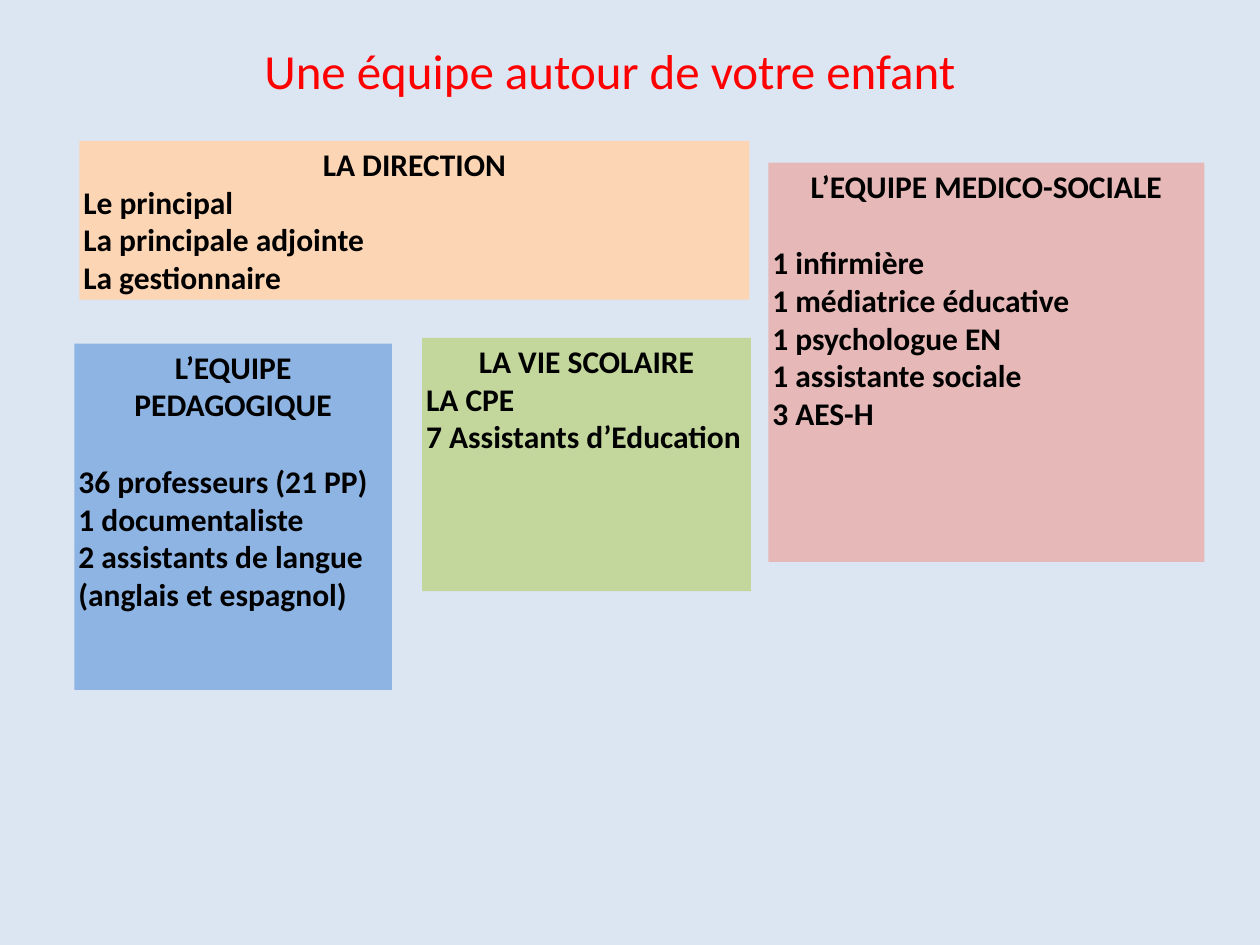
import pptx
import pptx.dml.color
import pptx.enum.shapes
import pptx.enum.text
import pptx.util

Cm, Pt = pptx.util.Cm, pptx.util.Pt
ALIGN = pptx.enum.text.PP_ALIGN
ANCHOR = pptx.enum.text.MSO_ANCHOR

COLORS = {
    "background": "DCE6F2",
    "title": "FF0000",
    "text": "000000",
    "direction": "FCD5B5",
    "teaching": "8EB4E3",
    "school_life": "C3D69B",
    "medical": "E6B9B8",
}


def rgb(name):
    return pptx.dml.color.RGBColor.from_string(COLORS[name])


def write(p, text, font="Calibri", size=18, color="text", bold=False,
          align=ALIGN.LEFT, after=0):
    p.alignment = align
    p.space_after = Pt(after)
    r = p.add_run()
    r.text = text
    r.font.name = font
    r.font.size = Pt(size)
    r.font.bold = bold
    r.font.color.rgb = rgb(color)


class TeamSlide:
    inset = Cm(0.08)
    heading_gap = 22  # one line of 18 pt text

    def __init__(self, prs):
        self.s = prs.slides.add_slide(prs.slide_layouts[6])
        fill = self.s.background.fill
        fill.solid()
        fill.fore_color.rgb = rgb("background")

    def title(self, text, box):
        sp = self.s.shapes.add_textbox(*map(Cm, box))
        tf = sp.text_frame
        tf.word_wrap = True
        tf.vertical_anchor = ANCHOR.MIDDLE
        write(tf.paragraphs[0], text, size=28, color="title", align=ALIGN.CENTER)

    def team(self, color, box, heading, members, gap=False):
        """Draw a filled box; gap leaves one line below the heading."""
        sp = self.s.shapes.add_shape(
            pptx.enum.shapes.MSO_SHAPE.RECTANGLE, *map(Cm, box))
        sp.shadow.inherit = False
        sp.fill.solid()
        sp.fill.fore_color.rgb = rgb(color)
        sp.line.fill.background()
        tf = sp.text_frame
        tf.word_wrap = True
        tf.vertical_anchor = ANCHOR.TOP
        tf.margin_left = tf.margin_right = self.inset
        tf.margin_top = tf.margin_bottom = self.inset
        write(tf.paragraphs[0], heading, bold=True, align=ALIGN.CENTER,
              after=self.heading_gap if gap else 0)
        for member in members:
            write(tf.add_paragraph(), member, bold=True)


def main():
    prs = pptx.Presentation()
    prs.slide_width, prs.slide_height = Cm(25.4), Cm(19.05)
    slide = TeamSlide(prs)
    slide.team("teaching", (1.5, 6.93, 6.4, 6.98), "L’EQUIPE PEDAGOGIQUE",
               ["36 professeurs (21 PP)", "1 documentaliste",
                "2 assistants de langue", "(anglais et espagnol)"], gap=True)
    slide.team("school_life", (8.51, 6.81, 6.63, 5.11), "LA VIE SCOLAIRE",
               ["LA CPE", "7 Assistants d’Education"])
    slide.team("medical", (15.49, 3.28, 8.79, 8.05), "L’EQUIPE MEDICO-SOCIALE",
               ["1 infirmière", "1 médiatrice éducative", "1 psychologue EN",
                "1 assistante sociale", "3 AES-H"], gap=True)
    slide.title("Une équipe autour de votre enfant", (3.1, 0.91, 18.39, 0.99))
    slide.team("direction", (1.6, 2.84, 13.51, 3.2), "LA DIRECTION",
               ["Le principal", "La principale adjointe", "La gestionnaire"])
    prs.save("out.pptx")


if __name__ == "__main__":
    main()
